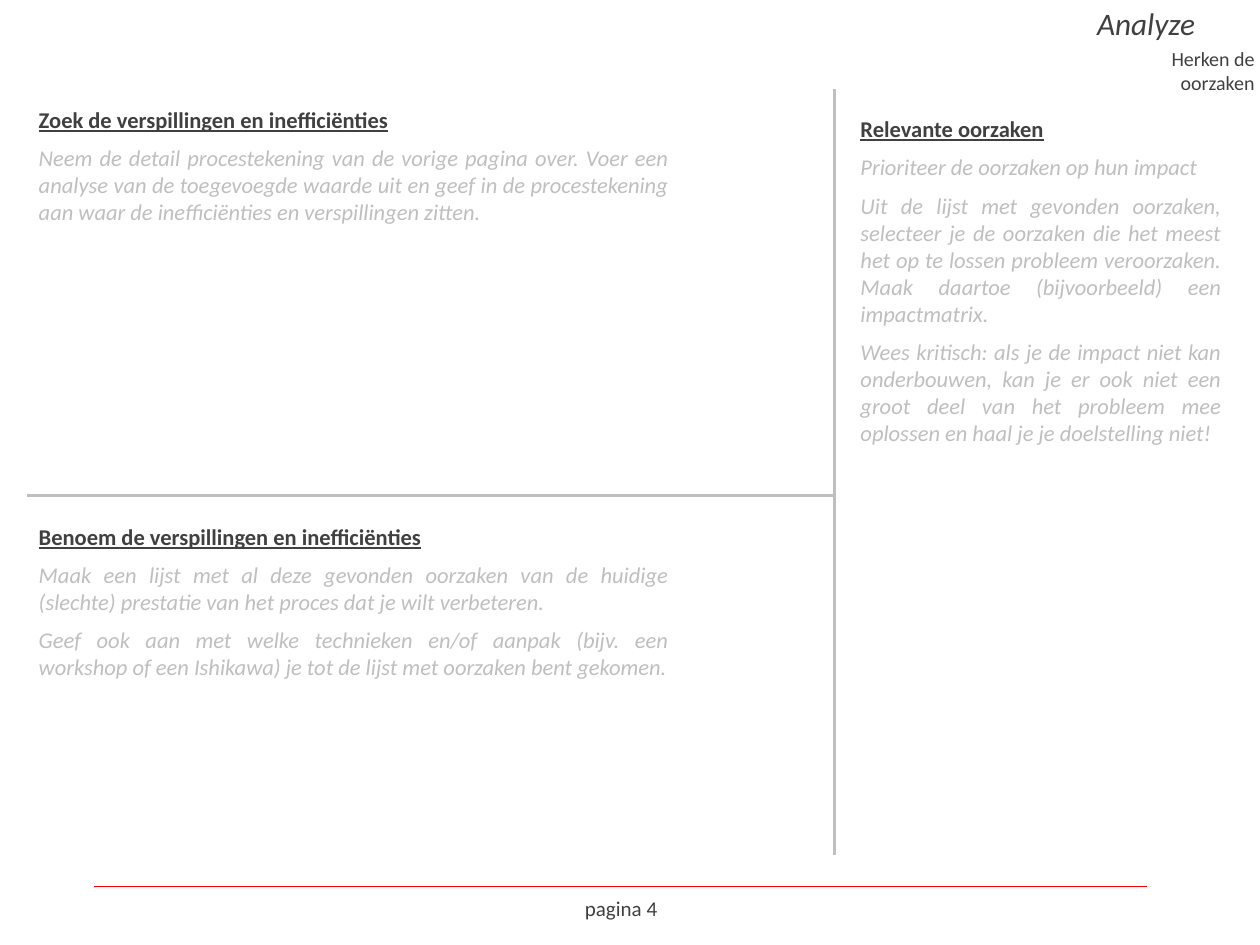
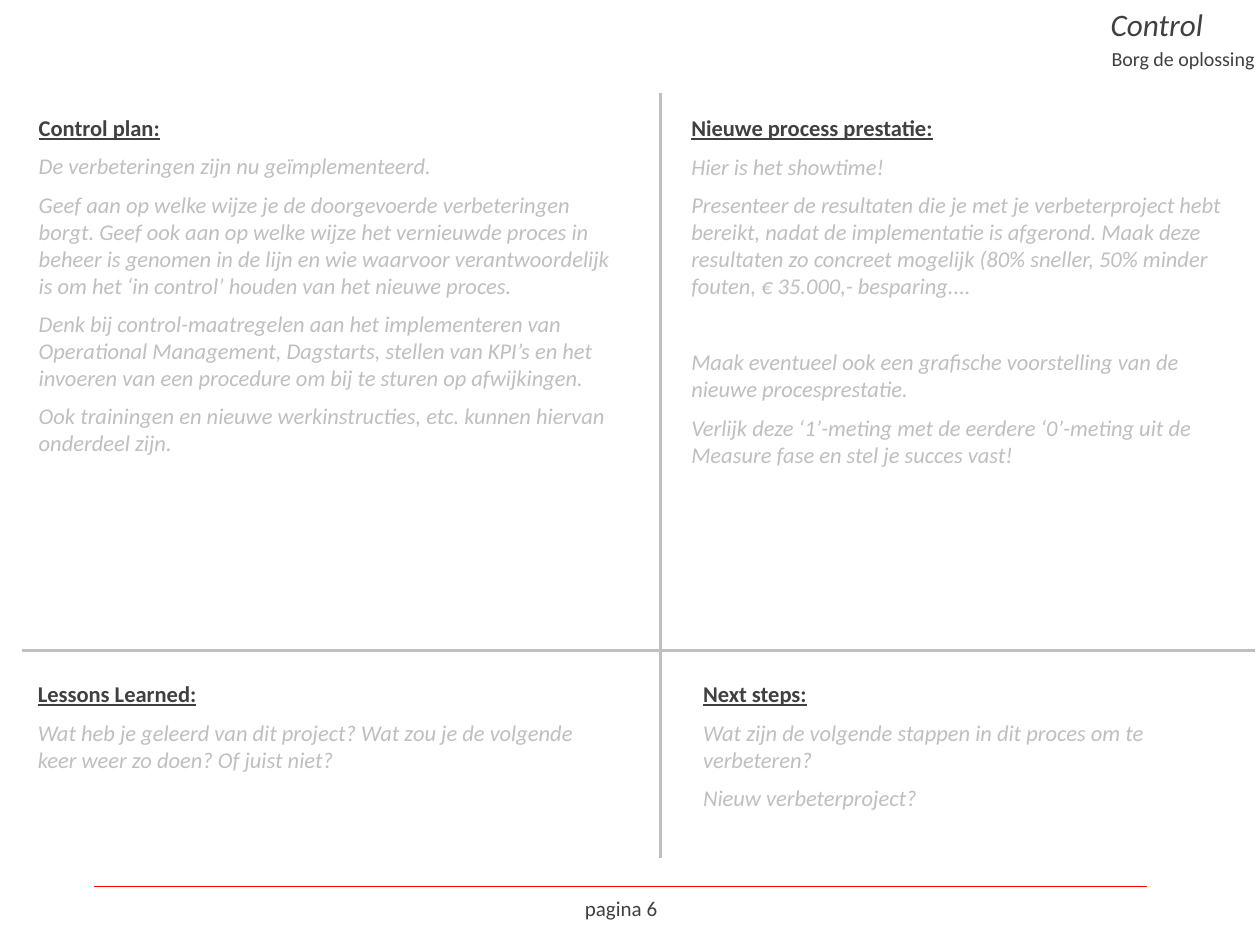
import pptx
import pptx.dml.color
import pptx.enum.shapes
import pptx.enum.text
import pptx.oxml.ns
import pptx.util
from lxml import etree

Pt = pptx.util.Pt
Align = pptx.enum.text.PP_ALIGN
AutoSize = pptx.enum.text.MSO_AUTO_SIZE

DARK = pptx.dml.color.RGBColor(0x40, 0x40, 0x40)
GREY = pptx.dml.color.RGBColor(0xBF, 0xBF, 0xBF)
RED = pptx.dml.color.RGBColor(0xFF, 0x00, 0x00)
FONT = "Calibri"
TITLE_ONLY = 5
PARAGRAPH_GAP = 9
WIDE_GAP = 39.6
PANEL_INSETS = (9.4, 5)


def style_paragraph(para, size, color, align=Align.LEFT, bold=False,
                    italic=False, underline=False):
    para.alignment = align
    for span in para.runs:
        font = span.font
        font.name, font.size = FONT, Pt(size)
        font.color.rgb = color
        font.bold, font.italic, font.underline = bold, italic, underline


def set_frame(box, insets, wrap=True, grow=True):
    frame = box.text_frame
    frame.margin_left = frame.margin_right = Pt(insets[0])
    frame.margin_top = frame.margin_bottom = Pt(insets[1])
    frame.vertical_anchor = pptx.enum.text.MSO_ANCHOR.TOP
    frame.word_wrap = wrap
    frame.auto_size = AutoSize.SHAPE_TO_FIT_TEXT if grow else AutoSize.NONE
    return frame


def add_text(page, area, text, insets, grow=True):
    box = page.shapes.add_textbox(*map(Pt, area))
    frame = set_frame(box, insets, grow=grow)
    frame.text = text
    return frame


def add_rule(page, start, end, color=GREY, width=2.25):
    rule = page.shapes.add_connector(
        pptx.enum.shapes.MSO_CONNECTOR.STRAIGHT, *map(Pt, start + end))
    rule.line.color.rgb = color
    rule.line.width = Pt(width)
    properties = rule._element.spPr
    etree.SubElement(properties, pptx.oxml.ns.qn("a:effectLst"))


def add_panel(page, area, heading, hints, align=Align.LEFT,
              insets=PANEL_INSETS, wide_before=None):
    """Underlined heading followed by grey hints; wide_before numbers a hint."""
    frame = add_text(page, area, "\n".join([heading] + hints), insets)
    first, *rest = frame.paragraphs
    style_paragraph(first, 18, DARK, bold=True, underline=True)
    for number, para in enumerate(rest):
        style_paragraph(para, 18, GREY, align, italic=True)
        para.space_before = Pt(WIDE_GAP if number == wide_before else PARAGRAPH_GAP)


def add_page(deck, title, title_area, subtitle, number):
    page = deck.slides.add_slide(deck.slide_layouts[TITLE_ONLY])

    # Title and subtitle, top right
    box = page.shapes.title
    box.left, box.top, box.width, box.height = map(Pt, title_area)
    frame = set_frame(box, (7.2, 3.6), wrap=False)
    frame.text = title
    style_paragraph(frame.paragraphs[0], 25, DARK, italic=True)
    frame = add_text(page, (881.3, 37.4, 122.4, 19.4), subtitle, (0, 0))
    style_paragraph(frame.paragraphs[0], 16, DARK, Align.RIGHT)

    # Footer
    add_rule(page, (917.3, 709.2), (75.6, 709.2), RED, 1.35)
    frame = add_text(page, (421.9, 711.4, 149.8, 23.8), f"pagina {number}",
                     (10, 5), grow=False)
    style_paragraph(frame.paragraphs[0], 16.8, DARK, Align.CENTER)
    return page


def build_analyze(deck):
    page = add_page(deck, "Analyze", (870.5, 0, 93.6, 37.4),
                    "Herken de oorzaken", 4)
    add_panel(page, (679, 87.1, 307.4, 282.2), "Relevante oorzaken", [
        "Prioriteer de oorzaken op hun impact",
        "Uit de lijst met gevonden oorzaken, selecteer je de oorzaken die het "
        "meest het op te lossen probleem veroorzaken. Maak daartoe "
        "(bijvoorbeeld) een impactmatrix.",
        "Wees kritisch: als je de impact niet kan onderbouwen, kan je er ook "
        "niet een groot deel van het probleem mee oplossen en haal je je "
        "doelstelling niet!",
    ], Align.JUSTIFY)
    add_panel(page, (21.6, 79.9, 522.7, 108),
              "Zoek de verspillingen en inefficiënties", [
        "Neem de detail procestekening van de vorige pagina over. Voer een "
        "analyse van de toegevoegde waarde uit en geef in de procestekening "
        "aan waar de inefficiënties en verspillingen zitten.",
    ], Align.JUSTIFY)
    add_panel(page, (21.6, 413.3, 522.7, 140.4),
              "Benoem de verspillingen en inefficiënties", [
        "Maak een lijst met al deze gevonden oorzaken van de huidige "
        "(slechte) prestatie van het proces dat je wilt verbeteren.",
        "Geef ook aan met welke technieken en/of aanpak (bijv. een workshop "
        "of een Ishikawa) je tot de lijst met oorzaken bent gekomen.",
    ], Align.JUSTIFY)
    # Dividers
    add_rule(page, (21.6, 396.7), (667.4, 396.7))
    add_rule(page, (667.4, 71.3), (667.4, 684))


def build_control(deck):
    page = add_page(deck, "Control", (881.3, 0.7, 89.3, 37.4),
                    "Borg de oplossing", 6)
    add_panel(page, (21.6, 86.4, 482.4, 293), "Control plan:", [
        "De verbeteringen zijn nu geïmplementeerd.",
        "Geef aan op welke wijze je de doorgevoerde verbeteringen borgt. Geef "
        "ook aan op welke wijze het vernieuwde proces in beheer is genomen in "
        "de lijn en wie waarvoor verantwoordelijk is om het ‘in control’ "
        "houden van het nieuwe proces.",
        "Denk bij control-maatregelen aan het implementeren van Operational "
        "Management, Dagstarts, stellen van KPI’s en het invoeren van een "
        "procedure om bij te sturen op afwijkingen.",
        "Ook trainingen en nieuwe werkinstructies, etc. kunnen hiervan "
        "onderdeel zijn.",
    ])
    add_panel(page, (553, 91.4, 430.6, 294.5), "Nieuwe process prestatie:", [
        "Hier is het showtime!",
        "Presenteer de resultaten die je met je verbeterproject hebt bereikt, "
        "nadat de implementatie is afgerond. Maak deze resultaten zo concreet "
        "mogelijk (80% sneller, 50% minder fouten, € 35.000,- besparing....",
        "Maak eventueel ook een grafische voorstelling van de nieuwe "
        "procesprestatie.",
        "Verlijk deze ‘1’-meting met de eerdere ‘0’-meting uit de Measure "
        "fase en stel je succes vast!",
    ], insets=(0, 0), wide_before=2)
    add_panel(page, (20.9, 539.3, 451.4, 118.8), "Lessons Learned:", [
        "Wat heb je geleerd van dit project? Wat zou je de volgende keer weer "
        "zo doen? Of juist niet?",
    ])
    add_panel(page, (553, 539.3, 430.6, 118.8), "Next steps:", [
        "Wat zijn de volgende stappen in dit proces om te verbeteren?",
        "Nieuw verbeterproject?",
    ])
    # Dividers
    add_rule(page, (17.3, 520.6), (1003.7, 520.6))
    add_rule(page, (528.5, 74.2), (528.5, 686.2))


def main():
    deck = pptx.Presentation()
    deck.slide_width, deck.slide_height = Pt(1008), Pt(756)
    build_analyze(deck)
    build_control(deck)
    deck.save("out.pptx")


if __name__ == "__main__":
    main()
